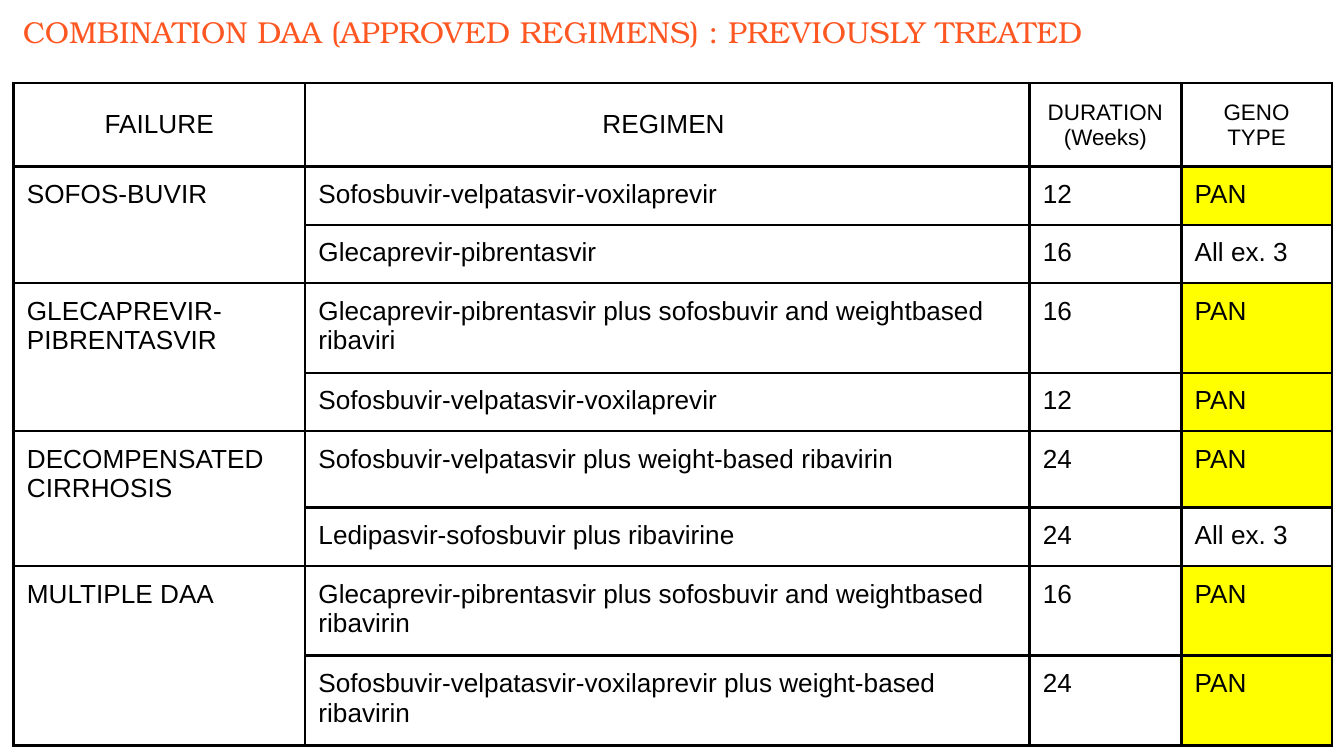
from lxml.etree import SubElement as Sub
from pptx import Presentation
from pptx.dml.color import RGBColor
from pptx.enum.text import MSO_ANCHOR as Anchor, PP_ALIGN as Align
from pptx.oxml.ns import qn
from pptx.util import Inches, Pt

WIDE = Inches(10)
HIGH = WIDE * 9 // 16
PAD = Inches(0.1)
INK, GOLD, CORAL = "000000", "FFFF00", "FF5722"
COLS = [2.17, 5.39, 1.13, 1.12]
ROWS = [0.62, 0.4, 0.43, 0.62, 0.4, 0.57, 0.43, 0.62, 0.62]
HEADS = [("FAILURE", 14), ("REGIMEN ", 14), ("DURATION (Weeks)", 12), ("GENO TYPE", 12)]
GROUPS = [
    ("SOFOS-BUVIR", [
        ("Sofosbuvir-velpatasvir-voxilaprevir", "12", "PAN"),
        ("Glecaprevir-pibrentasvir", "16", "All ex. 3")]),
    ("GLECAPREVIR-PIBRENTASVIR", [
        ("Glecaprevir-pibrentasvir plus sofosbuvir and weightbased ribaviri", "16", "PAN"),
        ("Sofosbuvir-velpatasvir-voxilaprevir", "12", "PAN")]),
    ("DECOMPENSATED CIRRHOSIS", [
        ("Sofosbuvir-velpatasvir plus weight-based ribavirin", "24", "PAN"),
        ("Ledipasvir-sofosbuvir plus ribavirine", "24", "All ex. 3")]),
    ("MULTIPLE DAA", [
        ("Glecaprevir-pibrentasvir plus sofosbuvir and weightbased ribavirin", "16", "PAN"),
        ("Sofosbuvir-velpatasvir-voxilaprevir plus weight-based ribavirin", "24", "PAN")]),
]


def color(code):
    return RGBColor.from_string(code)


def area(left, top, width, height):
    return [int(WIDE * left), int(HIGH * top), int(WIDE * width), int(HIGH * height)]


def write(frame, text, size=14, font="Arial", ink=INK, align=Align.LEFT):
    par = frame.paragraphs[0]
    par.alignment = align
    run = par.add_run()
    run.text = text
    run.font.size = Pt(size)
    run.font.name = font
    run.font.color.rgb = color(ink)


def inset(part):
    part.margin_left = part.margin_right = PAD
    part.margin_top = part.margin_bottom = PAD


def style(cell):
    inset(cell)
    props = cell._tc.get_or_add_tcPr()
    for side in ("lnL", "lnR", "lnT", "lnB"):
        line = Sub(props, qn(f"a:{side}"), w=str(Pt(1.5)))
        paint = Sub(line, qn("a:solidFill"))
        Sub(paint, qn("a:srgbClr"), val=INK)
    cell.fill.background()


def title(slide, box):
    frame = slide.shapes.add_textbox(*box).text_frame
    frame.word_wrap = True
    inset(frame)
    write(frame, " COMBINATION DAA (APPROVED REGIMENS) : PREVIOUSLY TREATED",
          size=16.2, font="TeX Gyre Bonum", ink=CORAL)


def grid(slide, box):
    holder = slide.shapes.add_table(len(ROWS), len(COLS), *box)
    table = holder.table
    table.first_row = table.horz_banding = False
    for col, part in zip(table.columns, COLS):
        col.width = Inches(part)
    for row, part in zip(table.rows, ROWS):
        row.height = Inches(part)
    holder.width, holder.height = box[2:]
    for cell in table.iter_cells():
        style(cell)
    for col, (text, size) in enumerate(HEADS):
        cell = table.cell(0, col)
        cell.vertical_anchor = Anchor.MIDDLE
        write(cell.text_frame, text, size=size, align=Align.CENTER)
    top = 1
    for name, lines in GROUPS:
        first = table.cell(top, 0)
        first.merge(table.cell(top + len(lines) - 1, 0))
        write(first.text_frame, name)
        for row, line in enumerate(lines, top):
            for col, text in enumerate(line, 1):
                cell = table.cell(row, col)
                write(cell.text_frame, text)
                if text == "PAN":
                    cell.fill.solid()
                    cell.fill.fore_color.rgb = color(GOLD)
        top += len(lines)


def main():
    deck = Presentation()
    deck.slide_width, deck.slide_height = WIDE, HIGH
    slide = deck.slides.add_slide(deck.slide_layouts[6])
    title(slide, area(0, 0, 0.98, 0.04))
    grid(slide, area(0.01, 0.11, 0.33, 0.58))
    deck.save("out.pptx")


if __name__ == "__main__":
    main()
